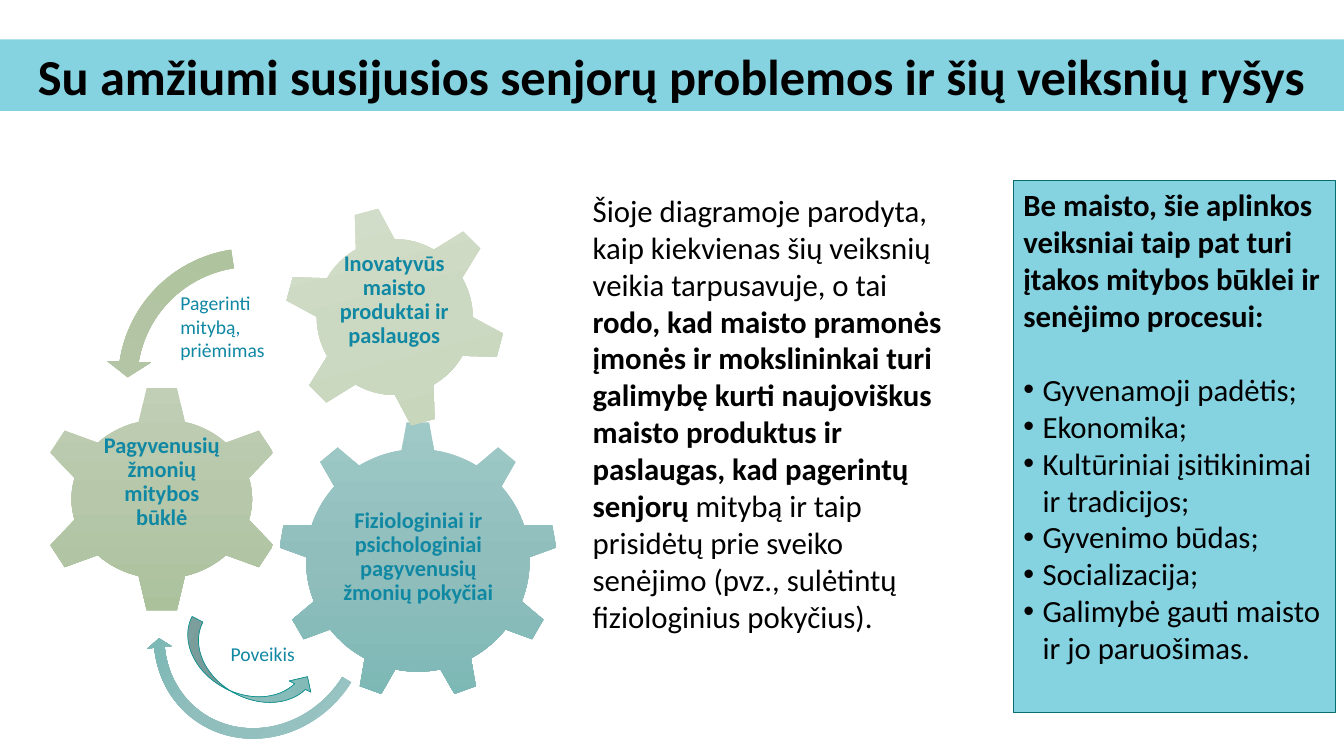
import copy

import pptx
import pptx.dml.color
import pptx.enum.shapes
import pptx.enum.text
import pptx.oxml.ns
import pptx.util
from lxml import etree

Inches = pptx.util.Inches
Pt = pptx.util.Pt
SHAPE = pptx.enum.shapes.MSO_SHAPE
ALIGN = pptx.enum.text.PP_ALIGN
ANCHOR = pptx.enum.text.MSO_ANCHOR
AUTO_SIZE = pptx.enum.text.MSO_AUTO_SIZE

AQUA, BLACK, TEAL_TEXT = "85D2E1", "000000", "1188A3"
TEAL = ("9EC9C7", "90BEBC", "7CB8B5")
SAGE = ("C1CFB6", "B6C7AA", "ABC19C")
PALE = ("D6E0CD", "CCD9C2", "C6D5B9")
OLIVE = ("ACC199", "B6C7AA", "ABC19C")


def rgb(value):
    return pptx.dml.color.RGBColor.from_string(value)


def add_text(paragraph, text, size=22, color=BLACK, bold=False, align=None,
             spacing=None, before=None):
    run = paragraph.add_run()
    run.text = text
    run.font.name = "Calibri"
    run.font.size = Pt(size)
    run.font.bold = bold
    run.font.color.rgb = rgb(color)
    if align is not None:
        paragraph.alignment = align
    if spacing is not None:
        paragraph.line_spacing = spacing
    if before is not None:
        paragraph.space_before = Pt(before)


def set_bullet(paragraph, char=None):
    properties = paragraph._p.get_or_add_pPr()
    hang = Inches(0.19) if char else 0
    properties.set("marL", str(hang))
    properties.set("indent", str(-hang))
    tag = "a:buChar" if char else "a:buNone"
    if char:
        face = etree.SubElement(properties, pptx.oxml.ns.qn("a:buFont"))
        face.set("typeface", "Arial")
    bullet = etree.SubElement(properties, pptx.oxml.ns.qn(tag))
    if char:
        bullet.set("char", char)


def place(shape, box):
    shape.left, shape.top, shape.width, shape.height = map(Inches, box)


def add_frame(slide, box, inset=None, wrap=True):
    frame = slide.shapes.add_textbox(*map(Inches, box)).text_frame
    frame.word_wrap = wrap
    if inset is not None:
        frame.margin_left = frame.margin_right = Inches(inset)
        frame.margin_top = frame.margin_bottom = Inches(inset)
        frame.vertical_anchor = ANCHOR.MIDDLE
    return frame


def add_gradient_shape(slide, kind, box, colors, positions=(0, 0.5, 1),
                       rotation=0, adjustments=(), line=None):
    shape = slide.shapes.add_shape(kind, *map(Inches, box))
    shape.shadow.inherit = False
    shape.rotation = rotation
    for index, value in enumerate(adjustments):
        shape.adjustments[index] = value
    shape.fill.gradient()
    shape.fill.gradient_angle = 270
    stops = shape.element.xpath(".//a:gsLst")[0]
    stops.insert(1, copy.deepcopy(stops[0]))
    for stop, color, position in zip(shape.fill.gradient_stops, colors, positions):
        stop.color.rgb = rgb(color)
        stop.position = position
    if line:
        shape.line.color.rgb = rgb(line)
        shape.line.width = Pt(0.5)
    else:
        shape.line.fill.background()


def add_title(slide, box):
    title = slide.shapes.title
    place(title, box)
    title.fill.solid()
    title.fill.fore_color.rgb = rgb(AQUA)
    frame = title.text_frame
    frame.auto_size = AUTO_SIZE.NONE
    frame.vertical_anchor = ANCHOR.MIDDLE
    add_text(frame.paragraphs[0],
             "Su amžiumi susijusios senjorų problemos ir šių veiksnių ryšys",
             size=36, bold=True, align=ALIGN.CENTER)


def add_gear_diagram(slide, box):
    left, top, _, _ = box

    def within(x, y, width, height):
        return left + x, top + y, width, height

    gears = [
        (SHAPE.GEAR_9, (2.39, 2.14, 2.77, 2.76), TEAL, 0, (2.95, 2.78, 1.66, 1.42),
         "Fiziologiniai ir psichologiniai pagyvenusių žmonių pokyčiai"),
        (SHAPE.GEAR_6, (0, 1.78, 2.47, 2.26), SAGE, 0, (0.6, 2.19, 1.27, 1.11),
         "Pagyvenusių žmonių mitybos būklė"),
        (SHAPE.GEAR_6, (2.44, 0, 2.21, 2.21), PALE, 345, (2.92, 0.32, 1.24, 1.24),
         "Inovatyvūs maisto produktai ir paslaugos"),
    ]
    for kind, gear, colors, rotation, label, text in gears:
        add_gradient_shape(slide, kind, within(*gear), colors, rotation=rotation)
        frame = add_frame(slide, within(*label), inset=0.02)
        add_text(frame.paragraphs[0], text, size=16, color=TEAL_TEXT, bold=True,
                 align=ALIGN.CENTER, spacing=0.9)

    add_gradient_shape(slide, SHAPE.CIRCULAR_ARROW, within(1.03, 3.09, 2.39, 2.21),
                       TEAL, positions=(0.01, 0.5, 0.67), rotation=127.3,
                       adjustments=(0.047, 2.99, 25.352, 158.209, 0.055))
    add_gradient_shape(slide, SHAPE.LEFT_CIRCULAR_ARROW, within(0.68, 0.3, 2.88, 2.88),
                       OLIVE, positions=(0, 0.75, 1), rotation=14.1,
                       adjustments=(0.065, 4.3, 104.891, 148.378, 0.075))
    add_gradient_shape(slide, SHAPE.CURVED_RIGHT_ARROW, within(1.81, 3.91, 0.48, 1.41),
                       TEAL, rotation=297.6, line="0D9390")

    improvement = add_frame(slide, within(1.32, 0.8, 1.24, 0.81))
    for index, text in enumerate(("Pagerinti", "mitybą,", "priėmimas")):
        paragraph = improvement.add_paragraph() if index else improvement.paragraphs[0]
        add_text(paragraph, text, size=14, color=TEAL_TEXT)
    effect = add_frame(slide, within(1.82, 4.28, 0.89, 0.34), wrap=False)
    add_text(effect.paragraphs[0], "Poveikis", size=14, color=TEAL_TEXT)


def add_explanation(slide, box):
    explanation = add_frame(slide, box).paragraphs[0]
    add_text(explanation, "Šioje diagramoje parodyta, kaip kiekvienas šių veiksnių "
                          "veikia tarpusavuje, o tai ")
    add_text(explanation, "rodo, kad maisto pramonės įmonės ir mokslininkai turi "
                          "galimybę kurti naujoviškus maisto produktus ir paslaugas, "
                          "kad pagerintų senjorų ", bold=True)
    add_text(explanation, "mitybą ir taip prisidėtų prie sveiko senėjimo "
                          "(pvz., sulėtintų fiziologinius pokyčius).")


def add_factors(slide, box):
    factors = slide.placeholders[1]
    place(factors, box)
    factors.fill.solid()
    factors.fill.fore_color.rgb = rgb(AQUA)
    factors.line.color.rgb = rgb("086D6E")
    factors.line.width = Pt(0.5)
    frame = factors.text_frame
    frame.auto_size = AUTO_SIZE.NONE
    frame.vertical_anchor = ANCHOR.TOP
    heading = frame.paragraphs[0]
    set_bullet(heading)
    add_text(heading, "Be maisto, šie aplinkos veiksniai taip pat turi įtakos "
                      "mitybos būklei ir senėjimo procesui:", bold=True, before=0)
    items = ("Gyvenamoji padėtis;", "Ekonomika;",
             "Kultūriniai įsitikinimai ir tradicijos;", "Gyvenimo būdas;",
             "Socializacija;", "Galimybė gauti maisto ir jo paruošimas.")
    for index, text in enumerate(items):
        item = frame.add_paragraph()
        set_bullet(item, "•")
        add_text(item, text, before=0 if index else 26.5)


def main():
    presentation = pptx.Presentation()
    presentation.slide_width = Inches(13.33)
    presentation.slide_height = Inches(7.5)
    slide = presentation.slides.add_slide(presentation.slide_layouts[1])
    add_title(slide, (0, 0.39, 13.33, 0.71))
    add_gear_diagram(slide, (0.37, 2.04, 5.16, 5.3))
    add_explanation(slide, (5.78, 1.85, 3.81, 4.54))
    add_factors(slide, (10.05, 1.79, 3.19, 5.28))
    presentation.save("out.pptx")


if __name__ == "__main__":
    main()
